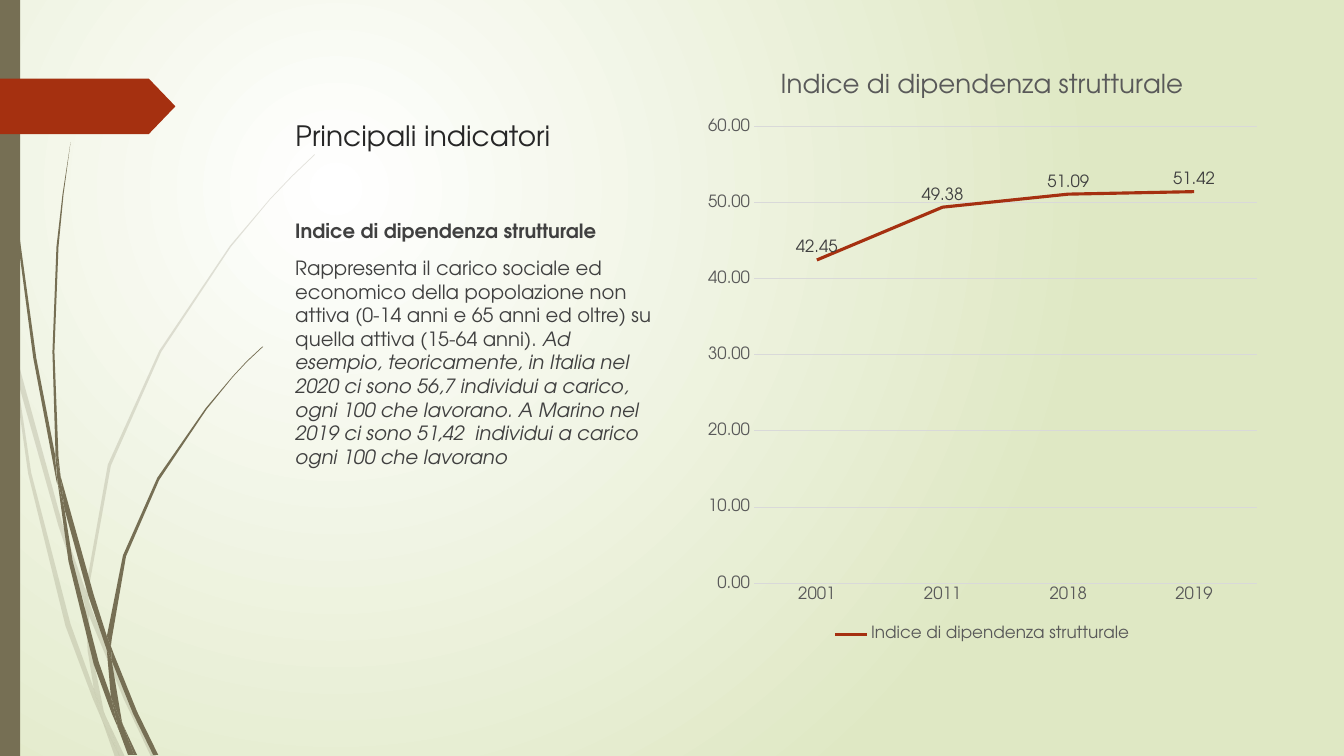
import lxml.etree
import pptx
import pptx.chart.data
import pptx.dml.color
import pptx.enum.chart
import pptx.enum.shapes
import pptx.enum.text
import pptx.oxml.ns
import pptx.util
from pptx.util import Inches

qn = pptx.oxml.ns.qn
RGBColor = pptx.dml.color.RGBColor
FONT = "TeX Gyre Adventor"
WHITE = RGBColor(0xFF, 0xFF, 0xFF)
PALE_GREEN = RGBColor(0xDF, 0xE8, 0xC4)
OLIVE = RGBColor(0x76, 0x6F, 0x54)
RUST = RGBColor(0xA5, 0x30, 0x10)
TITLE_INK = RGBColor(0x26, 0x26, 0x26)
BODY_INK = RGBColor(0x40, 0x40, 0x40)
CHART_INK = RGBColor(0x59, 0x59, 0x59)
GRID = RGBColor(0xD9, 0xD9, 0xD9)

INDEX_NAME = "Indice di dipendenza strutturale"
DEFINITION = ("Rappresenta il carico sociale ed economico della popolazione non attiva "
              "(0-14 anni e 65 anni ed oltre) su quella attiva (15-64 anni). ")
EXAMPLE = ("Ad esempio, teoricamente, in Italia nel 2020 ci sono 56,7 individui a carico, "
           "ogni 100 che lavorano. A Marino nel 2019 ci sono 51,42  individui a carico "
           "ogni 100 che lavorano")
YEARS = ("2001", "2011", "2018", "2019")
INDEX_VALUES = (42.45, 49.38, 51.09, 51.42)

FAINT_GRASS = (
    ((0.11, 3.5), (0.09, 3.22), (0, 2.82), (0, 2.99), (0.1, 3.44)),
    ((0.58, 5.22), (0.84, 5.99), (0.85, 5.86), (0.62, 5.2), (0.14, 3.45), (0.17, 3.76)),
    ((0.92, 6.07), (0.88, 5.96), (0.88, 6.1), (1.23, 6.94), (1.5, 7.51), (1.55, 7.51),
     (1.27, 6.92)),
    ((1.19, 7.51), (1.24, 7.51), (1.05, 7.11)),
    ((0.93, 6.83), (0.7, 6.19), (0.31, 4.69), (0.17, 3.76), (0.11, 3.5), (0.28, 4.7),
     (0.65, 6.21), (0.92, 6.93), (1.01, 7.14), (0.99, 7.07)),
    ((0.84, 5.99), (0.87, 6.46), (0.93, 6.83), (0.96, 6.92), (1.05, 7.11), (1.03, 7.06),
     (0.91, 6.46), (0.88, 6.1), (0.88, 6.08)),
    ((0.88, 5.84), (1.1, 4.62), (1.6, 3.49), (2.29, 2.45), (2.68, 1.98), (2.9, 1.75),
     (3.12, 1.54), (3.12, 1.53), (2.89, 1.75), (2.68, 1.97), (2.28, 2.44), (1.58, 3.48),
     (1.07, 4.61), (0.85, 5.84), (0.85, 5.86), (0.88, 5.96)),
    ((1.01, 7.14), (1.14, 7.51), (1.19, 7.51)),
    ((0.88, 6.08), (0.88, 6.1), (0.88, 5.96), (0.85, 5.86), (0.84, 5.99)),
    ((0.96, 6.92), (0.93, 6.83), (0.99, 7.07), (1.01, 7.14), (1.19, 7.51), (1.05, 7.11)),
)
DARK_GRASS = (
    ((0.07, 1.1), (0.17, 2.33), (0.33, 3.55), (0.56, 4.77), (0.57, 4.81), (0.55, 4.57),
     (0.55, 4.53), (0.36, 3.55), (0.19, 2.32), (0.08, 1.09), (0.05, 0.48), (0.04, 0),
     (0.03, 0), (0.04, 0.48)),
    ((0.88, 5.92), (1.06, 6.45), (1.06, 6.33), (1.06, 6.31), (0.93, 5.9), (0.6, 4.72),
     (0.64, 5.05)),
    ((1.13, 6.49), (1.1, 6.41), (1.11, 6.56), (1.32, 7.08), (1.52, 7.49), (1.57, 7.49),
     (1.36, 7.06)),
    ((1.1, 6.91), (0.98, 6.57), (0.72, 5.56), (0.64, 5.05), (0.57, 4.77), (0.68, 5.57),
     (0.93, 6.59), (1.11, 7.08), (1.17, 7.22), (1.16, 7.17)),
    ((0.6, 4.72), (0.58, 4.53), (0.54, 3.49), (0.58, 2.45), (0.63, 1.93), (0.7, 1.41),
     (0.62, 1.93), (0.56, 2.45), (0.52, 3.49), (0.55, 4.49)),
    ((1.33, 7.49), (1.36, 7.49), (1.22, 7.19)),
    ((0.57, 4.77), (0.64, 5.05), (0.6, 4.72), (0.55, 4.49), (0.55, 4.53)),
    ((1.11, 6.33), (1.25, 5.52), (1.58, 4.76), (2.05, 4.06), (2.31, 3.74), (2.45, 3.59),
     (2.61, 3.44), (2.6, 3.44), (2.45, 3.58), (2.31, 3.73), (2.04, 4.05), (1.56, 4.74),
     (1.22, 5.51), (1.06, 6.31), (1.1, 6.41)),
    ((1.17, 7.22), (1.27, 7.49), (1.31, 7.49)),
    ((1.06, 6.45), (1.1, 6.91), (1.16, 7.06), (1.22, 7.19), (1.21, 7.16), (1.11, 6.56),
     (1.09, 6.51)),
    ((1.06, 6.45), (1.09, 6.51), (1.11, 6.56), (1.1, 6.41), (1.06, 6.31), (1.06, 6.33)),
    ((1.16, 7.06), (1.1, 6.91), (1.16, 7.17), (1.17, 7.22), (1.3, 7.49), (1.33, 7.49),
     (1.22, 7.19)),
)


def set_background(slide):
    fill = slide.background.fill
    fill.gradient()
    for stop, color in zip(fill.gradient_stops, (WHITE, PALE_GREEN)):
        stop.color.rgb = color
    grad = slide.element.find(".//" + qn("a:gradFill"))
    grad.remove(grad.find(qn("a:lin")))
    circle = lxml.etree.SubElement(grad, qn("a:path"), {"path": "circle"})
    lxml.etree.SubElement(circle, qn("a:fillToRect"),
                          {"l": "50000", "t": "50000", "r": "100000", "b": "100000"})


def paint(sp, color, opacity=100):
    sp.shadow.inherit = False
    sp.line.fill.background()
    sp.fill.solid()
    sp.fill.fore_color.rgb = color
    if opacity < 100:
        clr = sp.fill._xPr.find(".//" + qn("a:srgbClr"))
        lxml.etree.SubElement(clr, qn("a:alpha"), {"val": str(opacity * 1000)})


def add_grass(slide, blades, opacity=100):
    group = slide.shapes.add_group_shape()
    for blade in blades:
        points = [(Inches(x), Inches(y)) for x, y in blade]
        builder = group.shapes.build_freeform(*points[0])
        builder.add_line_segments(points[1:], close=True)
        paint(builder.convert_to_shape(), OLIVE, opacity)


def add_block(slide, kind, left, top, width, height, color):
    sp = slide.shapes.add_shape(kind, Inches(left), Inches(top), Inches(width), Inches(height))
    paint(sp, color)
    return sp


def format_font(font, size, color, bold=False, italic=False):
    font.name = FONT
    font.size = pptx.util.Pt(size)
    font.color.rgb = color
    font.bold = bold
    font.italic = italic


def add_run(p, text, **fmt):
    r = p.add_run()
    r.text = text
    format_font(r.font, **fmt)


def add_title(slide):
    sp = slide.shapes.title
    sp.left, sp.top, sp.width, sp.height = (Inches(v) for v in (2.83, 0.49, 3.83, 1.07))
    tf = sp.text_frame
    tf.vertical_anchor = pptx.enum.text.MSO_ANCHOR.BOTTOM
    p = tf.paragraphs[0]
    p.alignment = pptx.enum.text.PP_ALIGN.LEFT
    add_run(p, "Principali indicatori", size=20, color=TITLE_INK)


def add_description(slide):
    sp = slide.shapes.add_textbox(Inches(2.83), Inches(2.12), Inches(3.83), Inches(4.29))
    tf = sp.text_frame
    tf.word_wrap = True
    add_run(tf.paragraphs[0], INDEX_NAME, size=14, color=BODY_INK, bold=True)
    p = tf.add_paragraph()
    p.space_before = pptx.util.Pt(10)
    add_run(p, DEFINITION, size=14, color=BODY_INK)
    add_run(p, EXAMPLE, size=14, color=BODY_INK, italic=True)


def format_line(line, color, width):
    line.color.rgb = color
    line.width = pptx.util.Pt(width)


def add_index_chart(slide):
    enum = pptx.enum.chart
    data = pptx.chart.data.CategoryChartData(number_format="0.00")
    data.categories = YEARS
    data.add_series(INDEX_NAME, INDEX_VALUES)
    chart = slide.shapes.add_chart(enum.XL_CHART_TYPE.LINE, Inches(6.91), Inches(0.49),
                                   Inches(5.67), Inches(5.92), data).chart
    format_font(chart.font, 12, CHART_INK)
    chart.has_title = True
    add_run(chart.chart_title.text_frame.paragraphs[0], INDEX_NAME, size=18.6, color=CHART_INK)
    chart.has_legend = True
    chart.legend.position = enum.XL_LEGEND_POSITION.BOTTOM
    chart.legend.include_in_layout = False
    format_font(chart.legend.font, 12, CHART_INK)
    for axis in (chart.category_axis, chart.value_axis):
        axis.major_tick_mark = enum.XL_TICK_MARK.NONE
        format_font(axis.tick_labels.font, 12, CHART_INK)
    format_line(chart.category_axis.format.line, GRID, 0.75)
    axis = chart.value_axis
    axis.minimum_scale, axis.maximum_scale, axis.major_unit = 0, 60, 10
    axis.format.line.fill.background()
    format_line(axis.major_gridlines.format.line, GRID, 0.75)
    axis.tick_labels.number_format = "0.00"
    axis.tick_labels.number_format_is_linked = False
    plot = chart.plots[0]
    plot.vary_by_categories = False
    series = plot.series[0]
    series.smooth = False
    series.marker.style = enum.XL_MARKER_STYLE.NONE
    format_line(series.format.line, RUST, 2.25)
    labels = series.data_labels
    labels.show_value = True
    labels.position = enum.XL_LABEL_POSITION.ABOVE
    labels.number_format = "0.00"
    labels.number_format_is_linked = False
    format_font(labels.font, 12, BODY_INK)


def main():
    prs = pptx.Presentation()
    prs.slide_width, prs.slide_height = Inches(13.33), Inches(7.5)
    slide = prs.slides.add_slide(prs.slide_layouts[5])
    shapes = pptx.enum.shapes.MSO_SHAPE
    set_background(slide)
    add_grass(slide, FAINT_GRASS, opacity=20)
    add_grass(slide, DARK_GRASS)
    add_block(slide, shapes.RECTANGLE, 0, 0, 0.2, 7.5, OLIVE)
    arrow = add_block(slide, shapes.PENTAGON, 0, 0.78, 1.74, 0.55, RUST)
    arrow.adjustments[0] = 0.48
    add_title(slide)
    add_index_chart(slide)
    add_description(slide)
    prs.save("out.pptx")


if __name__ == "__main__":
    main()
